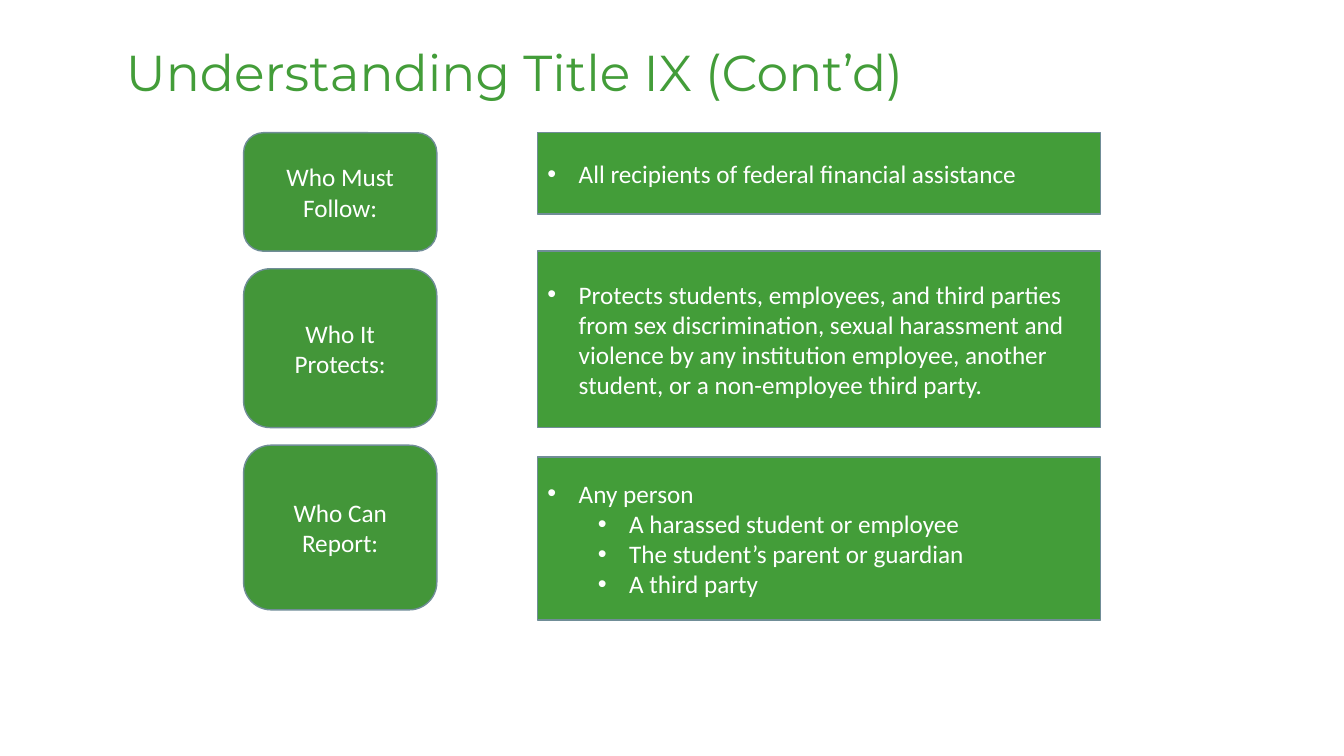
from dataclasses import dataclass

from lxml.etree import SubElement
from pptx import Presentation
from pptx.dml.color import RGBColor
from pptx.enum.shapes import MSO_SHAPE as Preset
from pptx.enum.text import MSO_ANCHOR as Anchor, MSO_AUTO_SIZE as AutoSize, PP_ALIGN as Align
from pptx.oxml.ns import qn
from pptx.shapes.autoshape import Shape
from pptx.slide import Slide
from pptx.text.text import _Paragraph as Paragraph
from pptx.util import Inches, Pt

WIDTH, HEIGHT = Inches(13.33), Inches(7.5)
COLUMN, ROW = WIDTH / 16, HEIGHT / 9
LABEL_LEFT, LABEL_WIDTH = 2.9, 2.3
ANSWER_LEFT, ANSWER_WIDTH = 6.4, 6.7
HANGING, LEVEL_STEP = Inches(0.31), Inches(0.5)

TITLE_GREEN = RGBColor(0x43, 0x9D, 0x39)
LABEL_GREEN = RGBColor(0x43, 0x96, 0x39)
OUTLINE = RGBColor(0x70, 0x8D, 0x97)
WHITE = RGBColor(0xFF, 0xFF, 0xFF)


@dataclass(frozen=True)
class Span:
    """Top and height in grid rows."""

    top: float
    height: float


@dataclass(frozen=True)
class Topic:
    """A question label and its bulleted answer."""

    label: str
    label_span: Span
    answer: str
    answer_span: Span
    details: tuple[str, ...] = ()


TOPICS = (
    Topic("Who Must Follow:", Span(1.58, 1.41),
          "All recipients of federal financial assistance", Span(1.58, 0.97)),
    Topic("Who It Protects:", Span(3.2, 1.89),
          "Protects students, employees, and third parties from sex discrimination, "
          "sexual harassment and violence by any institution employee, another student, "
          "or a non-employee third party.", Span(2.99, 2.1)),
    Topic("Who Can Report:", Span(5.3, 1.96), "Any person", Span(5.44, 1.94),
          ("A harassed student or employee", "The student’s parent or guardian", "A third party")),
)


def place(shape: Shape, left: float, width: float, span: Span) -> None:
    """Position a shape on the grid."""
    shape.left, shape.width = int(left * COLUMN), int(width * COLUMN)
    shape.top, shape.height = int(span.top * ROW), int(span.height * ROW)


def style(para: Paragraph, font: str, size: float, color: RGBColor) -> None:
    """Set the font of a paragraph."""
    para.font.name, para.font.size = font, Pt(size)
    para.font.color.rgb = color


def add_bullet(para: Paragraph, level: int) -> None:
    """Give a paragraph a hanging bullet at its level."""
    para.level = level
    properties = para._p.get_or_add_pPr()
    properties.set("marL", str(HANGING + level * LEVEL_STEP))
    properties.set("indent", str(-HANGING))
    SubElement(properties, qn("a:buFont")).set("typeface", "Arial")
    SubElement(properties, qn("a:buChar")).set("char", "•")


def add_box(page: Slide, preset: Preset, fill: RGBColor, left: float, width: float, span: Span) -> Shape:
    """Add an outlined box with middle-anchored text."""
    box = page.shapes.add_shape(preset, 0, 0, 0, 0)
    place(box, left, width, span)
    box.shadow.inherit = False
    box.fill.solid()
    box.fill.fore_color.rgb = fill
    box.line.color.rgb = OUTLINE
    box.line.width = Pt(1)
    box.text_frame.word_wrap = True
    box.text_frame.vertical_anchor = Anchor.MIDDLE
    return box


def add_topic(page: Slide, topic: Topic) -> None:
    """Draw the label and the answer of a topic."""
    label = add_box(page, Preset.ROUNDED_RECTANGLE, LABEL_GREEN, LABEL_LEFT, LABEL_WIDTH, topic.label_span)
    label.text_frame.text = topic.label
    caption = label.text_frame.paragraphs[0]
    caption.alignment = Align.CENTER
    style(caption, "Calibri", 18, WHITE)

    answer = add_box(page, Preset.RECTANGLE, TITLE_GREEN, ANSWER_LEFT, ANSWER_WIDTH, topic.answer_span)
    answer.text_frame.text = "\n".join((topic.answer, *topic.details))
    for index, para in enumerate(answer.text_frame.paragraphs):
        para.alignment = Align.LEFT
        add_bullet(para, min(index, 1))
        style(para, "Calibri", 18, WHITE)


def add_title(page: Slide, text: str) -> None:
    """Fill and format the title placeholder."""
    title = page.shapes.title
    place(title, 1.38, 11.52, Span(0.4, 0.98))
    frame = title.text_frame
    frame.text = text
    frame.word_wrap = True
    frame.auto_size = AutoSize.NONE
    frame.vertical_anchor = Anchor.MIDDLE
    para = frame.paragraphs[0]
    para.alignment = Align.LEFT
    para.line_spacing = 0.9
    style(para, "Montserrat", 36, TITLE_GREEN)


def main() -> None:
    """Build and save the deck."""
    deck = Presentation()
    deck.slide_width, deck.slide_height = WIDTH, HEIGHT
    page = deck.slides.add_slide(deck.slide_layouts.get_by_name("Title Only"))
    add_title(page, "Understanding Title IX (Cont’d)")
    for topic in TOPICS:
        add_topic(page, topic)
    deck.save("out.pptx")


if __name__ == "__main__":
    main()
